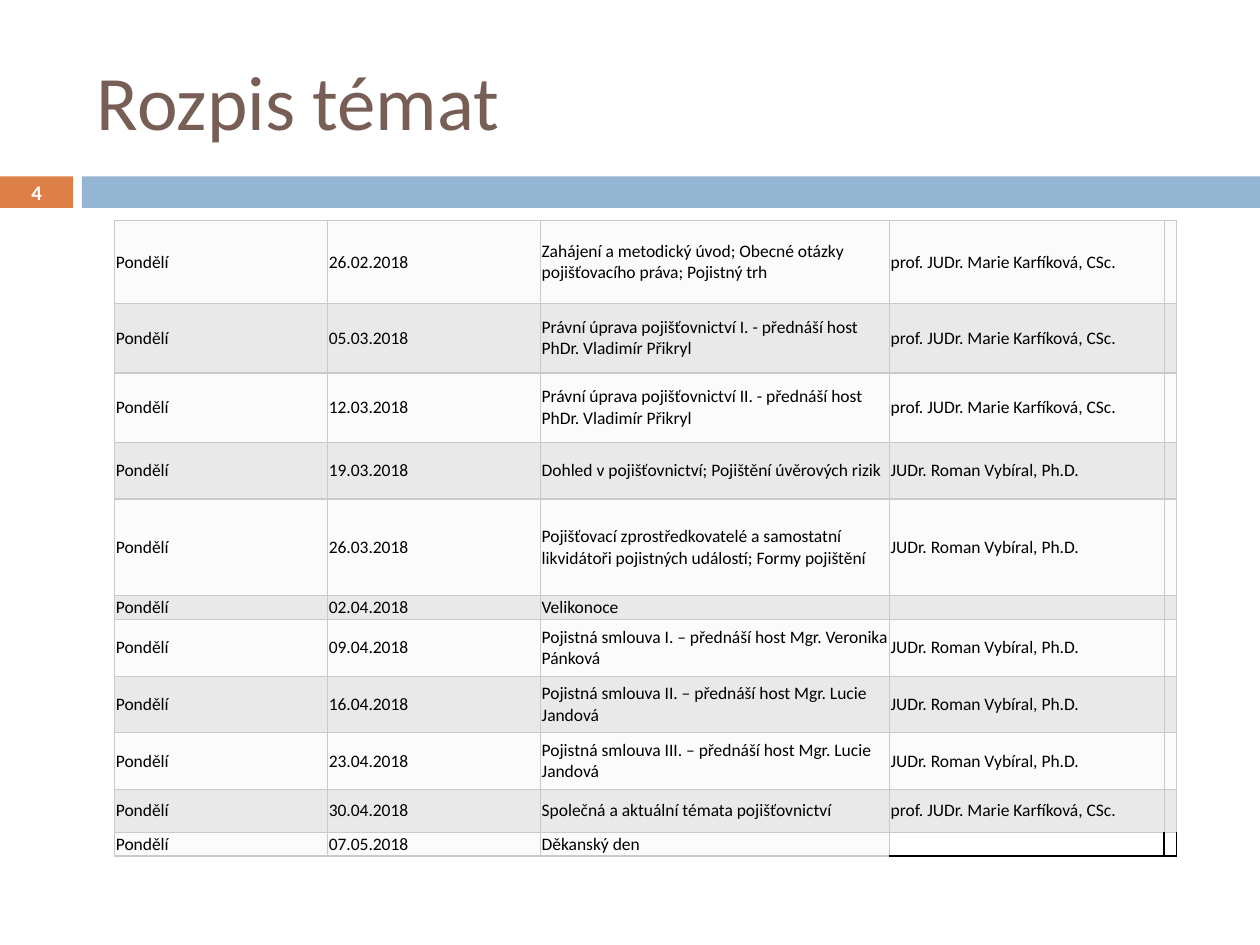
from lxml import etree
from pptx import Presentation
from pptx.dml.color import RGBColor
from pptx.enum.shapes import MSO_SHAPE
from pptx.enum.text import MSO_ANCHOR, PP_ALIGN
from pptx.oxml.ns import qn
from pptx.util import Inches, Pt

RECTANGLE = MSO_SHAPE.RECTANGLE
MIDDLE = MSO_ANCHOR.MIDDLE
LEFT, CENTER = PP_ALIGN.LEFT, PP_ALIGN.CENTER

KARFIKOVA = "prof. JUDr. Marie Karfíková, CSc."
VYBIRAL = "JUDr. Roman Vybíral, Ph.D."
DAY = "Pondělí"
COLUMN_WIDTHS = [1.69, 1.69, 2.77, 2.18, 0.1]
LECTURES = [
    (0.66, "26.02.2018", "Zahájení a metodický úvod; Obecné otázky pojišťovacího práva; Pojistný trh", KARFIKOVA),
    (0.55, "05.03.2018", "Právní úprava pojišťovnictví I. - přednáší host PhDr. Vladimír Přikryl", KARFIKOVA),
    (0.55, "12.03.2018", "Právní úprava pojišťovnictví II. - přednáší host PhDr. Vladimír Přikryl", KARFIKOVA),
    (0.45, "19.03.2018", "Dohled v pojišťovnictví; Pojištění úvěrových rizik", VYBIRAL),
    (0.77, "26.03.2018", "Pojišťovací zprostředkovatelé a samostatní likvidátoři pojistných událostí; Formy pojištění", VYBIRAL),
    (0.12, "02.04.2018", "Velikonoce", ""),
    (0.45, "09.04.2018", "Pojistná smlouva I. – přednáší host Mgr. Veronika Pánková", VYBIRAL),
    (0.45, "16.04.2018", "Pojistná smlouva II. – přednáší host Mgr. Lucie Jandová", VYBIRAL),
    (0.45, "23.04.2018", "Pojistná smlouva III. – přednáší host Mgr. Lucie Jandová", VYBIRAL),
    (0.34, "30.04.2018", "Společná a aktuální témata pojišťovnictví", KARFIKOVA),
    (0.14, "07.05.2018", "Děkanský den", ""),
]


def color(value):
    """Turn a hex string into a colour."""
    return RGBColor.from_string(value)


class SlideBuilder:
    """Hold the style and the current slide, and add elements to it."""

    font = "Calibri"
    title_color, white, black = "775F55", "FFFFFF", "000000"
    orange, blue = "DD8047", "94B6D2"
    bands = ["FBFBFB", "E9E9E9"]
    grid = "CACACA"
    cell_size = 10
    cell_inset = 0.01

    def __init__(self, slide):
        """Remember the slide to draw on."""
        self.slide = slide

    def bar(self, left, top, width, height, fill):
        """Add a plain filled rectangle."""
        shape = self.slide.shapes.add_shape(
            RECTANGLE, Inches(left), Inches(top), Inches(width), Inches(height))
        shape.shadow.inherit = False
        shape.fill.solid()
        shape.fill.fore_color.rgb = color(fill)
        shape.line.fill.background()

    def span(self, para, text, size, ink, bold=False):
        """Add one styled run to a paragraph."""
        span = para.add_run()
        span.text = text
        span.font.name = self.font
        span.font.size = Pt(size)
        span.font.bold = bold
        span.font.color.rgb = color(ink)

    def text(self, left, top, width, height, text, size, ink, align=LEFT, bold=False):
        """Add a vertically centred text box."""
        box = self.slide.shapes.add_textbox(
            Inches(left), Inches(top), Inches(width), Inches(height))
        frame = box.text_frame
        frame.word_wrap = True
        frame.vertical_anchor = MIDDLE
        para = frame.paragraphs[0]
        para.alignment = align
        self.span(para, text, size, ink, bold)

    def border(self, cell, side, ink, width):
        """Draw one side of a cell; sides go in the order L, R, T, B."""
        properties = cell._tc.get_or_add_tcPr()
        line = etree.SubElement(properties, qn(f"a:ln{side}"), w=str(Pt(width)))
        fill = etree.SubElement(line, qn("a:solidFill"))
        etree.SubElement(fill, qn("a:srgbClr"), val=ink)

    def cell(self, cell, text, fill, dark_sides=""):
        """Fill in one table cell; without a fill it stays clear."""
        cell.margin_left = cell.margin_right = Inches(self.cell_inset)
        cell.margin_top = cell.margin_bottom = Inches(self.cell_inset)
        cell.vertical_anchor = MIDDLE
        for side in "LRTB":
            dark = side in dark_sides
            self.border(cell, side, self.black if dark else self.grid, 1 if dark else 0.75)
        if fill:
            cell.fill.solid()
            cell.fill.fore_color.rgb = color(fill)
        else:
            cell.fill.background()
        para = cell.text_frame.paragraphs[0]
        if text:
            self.span(para, text, self.cell_size, self.black)
        else:
            etree.SubElement(para._p, qn("a:endParaRPr"), sz=str(self.cell_size * 100))

    def schedule(self, left, top, widths, lectures):
        """Add the banded lecture table."""
        heights = [lecture[0] for lecture in lectures]
        table = self.slide.shapes.add_table(
            len(lectures), len(widths), Inches(left), Inches(top),
            Inches(sum(widths)), Inches(sum(heights))).table
        table.first_row = table.horz_banding = False
        for column, width in zip(table.columns, widths):
            column.width = Inches(width)
        last = len(lectures) - 1
        for index, (height, date, topic, teacher) in enumerate(lectures):
            table.rows[index].height = Inches(height)
            for column, text in enumerate((DAY, date, topic, teacher, "")):
                clear = index == last and column > 2
                fill = None if clear else self.bands[index % 2]
                dark_sides = ("RB" if column == 3 else "LRB") if clear else ""
                self.cell(table.cell(index, column), text, fill, dark_sides)


def main():
    """Build and save the deck."""
    deck = Presentation()
    deck.slide_width, deck.slide_height = Inches(10), Inches(7.5)
    page = SlideBuilder(deck.slides.add_slide(deck.slide_layouts[6]))
    page.bar(0, 1.4, 0.58, 0.25, page.orange)
    page.bar(0.65, 1.4, 9.35, 0.25, page.blue)
    page.text(0.67, 0.25, 8.92, 1.08, "Rozpis témat", 44, page.title_color)
    page.text(0, 1.39, 0.58, 0.27, "4", 11.9, page.white, CENTER, True)
    page.schedule(0.91, 1.75, COLUMN_WIDTHS, LECTURES)
    deck.save("out.pptx")


if __name__ == "__main__":
    main()
